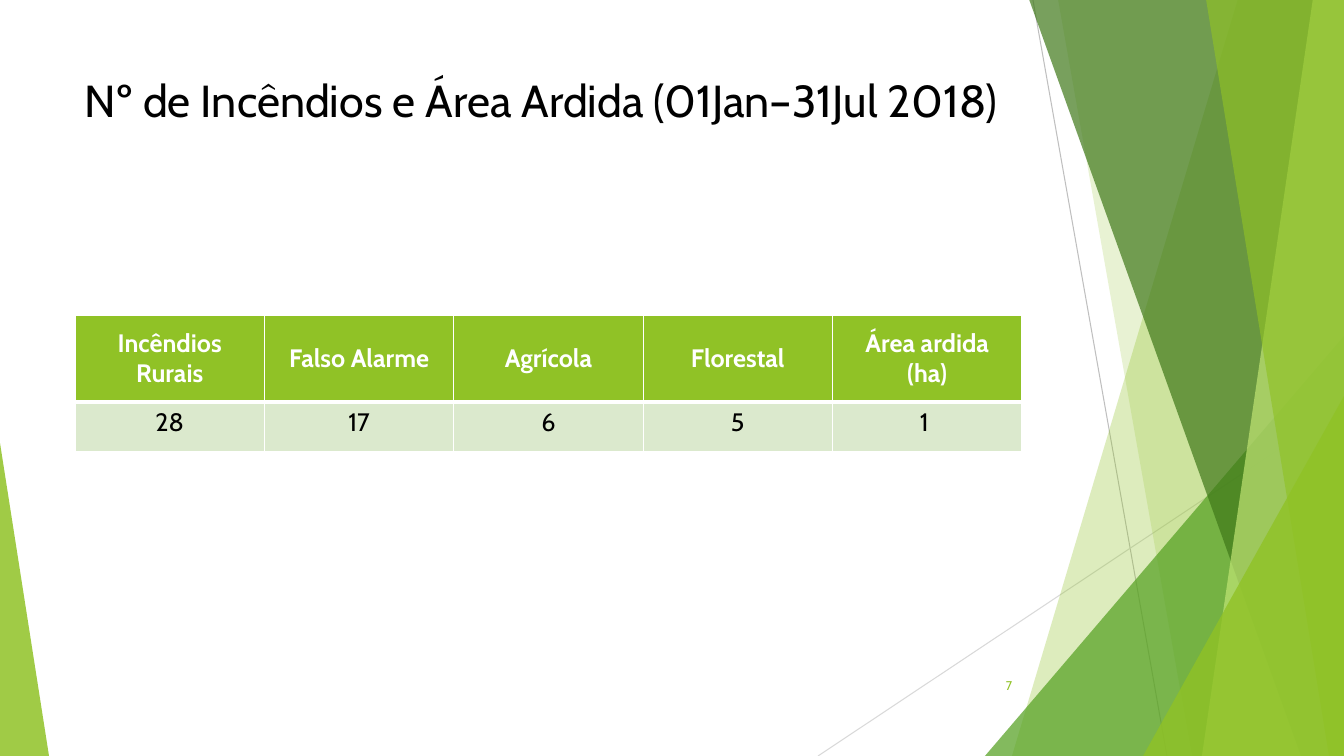
from lxml.etree import SubElement
from pptx import Presentation
from pptx.dml.color import RGBColor
from pptx.enum.shapes import MSO_CONNECTOR, MSO_SHAPE
from pptx.enum.text import MSO_ANCHOR, PP_ALIGN
from pptx.oxml.ns import qn
from pptx.util import Pt

PX = 914400 / 100.8
WIDTH, HEIGHT = 1344, 756
FONT = "Cabin"

BLACK = RGBColor(0x00, 0x00, 0x00)
WHITE = RGBColor(0xFF, 0xFF, 0xFF)
LIME = RGBColor(0x90, 0xC2, 0x26)
PALE_LIME = RGBColor(0xC0, 0xE4, 0x74)
GREEN = RGBColor(0x54, 0xA0, 0x21)
DARK_GREEN = RGBColor(0x3F, 0x78, 0x19)
PALE_GREEN = RGBColor(0xDB, 0xE9, 0xCD)
GREY = RGBColor(0xBF, 0xBF, 0xBF)
LIGHT_GREY = RGBColor(0xD9, 0xD9, 0xD9)

TITLE = "Nº de Incêndios e Área Ardida (01Jan–31Jul 2018)"
PAGE_NUMBER = "7"
ROWS = [
    ["Incêndios Rurais", "Falso Alarme", "Agrícola", "Florestal", "Área ardida (ha)"],
    ["28", "17", "6", "5", "1 "],
]
TABLE_BOX = (75, 315, 947, 137)
ROW_HEIGHTS = (87, 50)

# from x, from y, to x, to y, colour
LINES = [(1033, 0, 1167, HEIGHT, GREY), (WIDTH, 406, 818, HEIGHT, LIGHT_GREY)]

# Bands reach the right edge: left x at the top, left x at the bottom, colour, opacity %
# Triangles: box, apex position, colour, opacity %
FACETS = [
    ("band", (1238, 1012), LIME, 30),
    ("band", (1058, 1192), LIME, 20),
    ("triangle", (985, 336, 359, 420, 1), GREEN, 72),
    ("band", (1029, 1301), DARK_GREEN, 70),
    ("band", (1313, 1202), PALE_LIME, 70),
    ("band", (1206, 1329), LIME, 65),
    ("triangle", (1143, 396, 201, 360, 1), LIME, 80),
    ("triangle", (0, 443, 49, 313, 0), LIME, 85),
]


def px(*lengths):
    return [round(n * PX) for n in lengths]


def add_line(s, x1, y1, x2, y2, color):
    line = s.shapes.add_connector(MSO_CONNECTOR.STRAIGHT, *px(x1, y1, x2, y2))
    line.line.color.rgb = color
    line.line.width = Pt(0.75)
    SubElement(line._element.spPr, qn("a:effectLst"))


def add_facet(s, kind, geometry, color, opacity):
    if kind == "band":
        top_x, bottom_x = geometry
        outline = s.shapes.build_freeform(top_x, -1, scale=PX)
        outline.add_line_segments([(WIDTH, -1), (WIDTH, HEIGHT), (bottom_x, HEIGHT)])
        sp = outline.convert_to_shape()
    else:
        *box, apex = geometry
        sp = s.shapes.add_shape(MSO_SHAPE.ISOSCELES_TRIANGLE, *px(*box))
        sp.adjustments[0] = apex
    sp.shadow.inherit = False
    sp.line.fill.background()
    sp.fill.solid()
    sp.fill.fore_color.rgb = color
    srgb = sp._element.spPr.find(qn("a:solidFill")).find(qn("a:srgbClr"))
    SubElement(srgb, qn("a:alpha"), val=str(opacity * 1000))


def style(p, size, color, align, bold=False):
    p.alignment = align
    p.font.name = FONT
    p.font.size = Pt(size)
    p.font.color.rgb = color
    p.font.bold = bold


def add_text(s, box, text, size, color, align, anchor):
    tf = s.shapes.add_textbox(*px(*box)).text_frame
    tf.word_wrap = True
    tf.vertical_anchor = anchor
    p = tf.paragraphs[0]
    p.text = text
    style(p, size, color, align)


def set_borders(cell, **widths):
    tc_pr = cell._tc.get_or_add_tcPr()
    for side, width in widths.items():
        ln = SubElement(tc_pr, qn(f"a:ln{side}"), w=str(Pt(width)))
        SubElement(SubElement(ln, qn("a:solidFill")), qn("a:srgbClr"), val=str(WHITE))


def add_fire_table(s):
    table = s.shapes.add_table(len(ROWS), len(ROWS[0]), *px(*TABLE_BOX)).table
    for row, height in zip(table.rows, ROW_HEIGHTS):
        row.height = px(height)[0]
    for i, texts in enumerate(ROWS):
        header = i == 0
        for j, text in enumerate(texts):
            cell = table.cell(i, j)
            set_borders(cell, L=1, R=1, T=1 if header else 3, B=3 if header else 1)
            cell.fill.solid()
            cell.fill.fore_color.rgb = LIME if header else PALE_GREEN
            cell.vertical_anchor = MSO_ANCHOR.MIDDLE if header else MSO_ANCHOR.TOP
            cell.text = text
            style(cell.text_frame.paragraphs[0], 18, WHITE if header else BLACK,
                  PP_ALIGN.CENTER, header)


def main():
    prs = Presentation()
    prs.slide_width, prs.slide_height = px(WIDTH, HEIGHT)
    s = prs.slides.add_slide(prs.slide_layouts[6])
    for line in LINES:
        add_line(s, *line)
    for facet in FACETS:
        add_facet(s, *facet)
    add_text(s, (75, 68, 1243, 145), TITLE, 32, BLACK, PP_ALIGN.LEFT, MSO_ANCHOR.TOP)
    add_fire_table(s)
    add_text(s, (947, 666, 75, 40), PAGE_NUMBER, 9, LIME, PP_ALIGN.RIGHT, MSO_ANCHOR.MIDDLE)
    prs.save("out.pptx")


if __name__ == "__main__":
    main()
